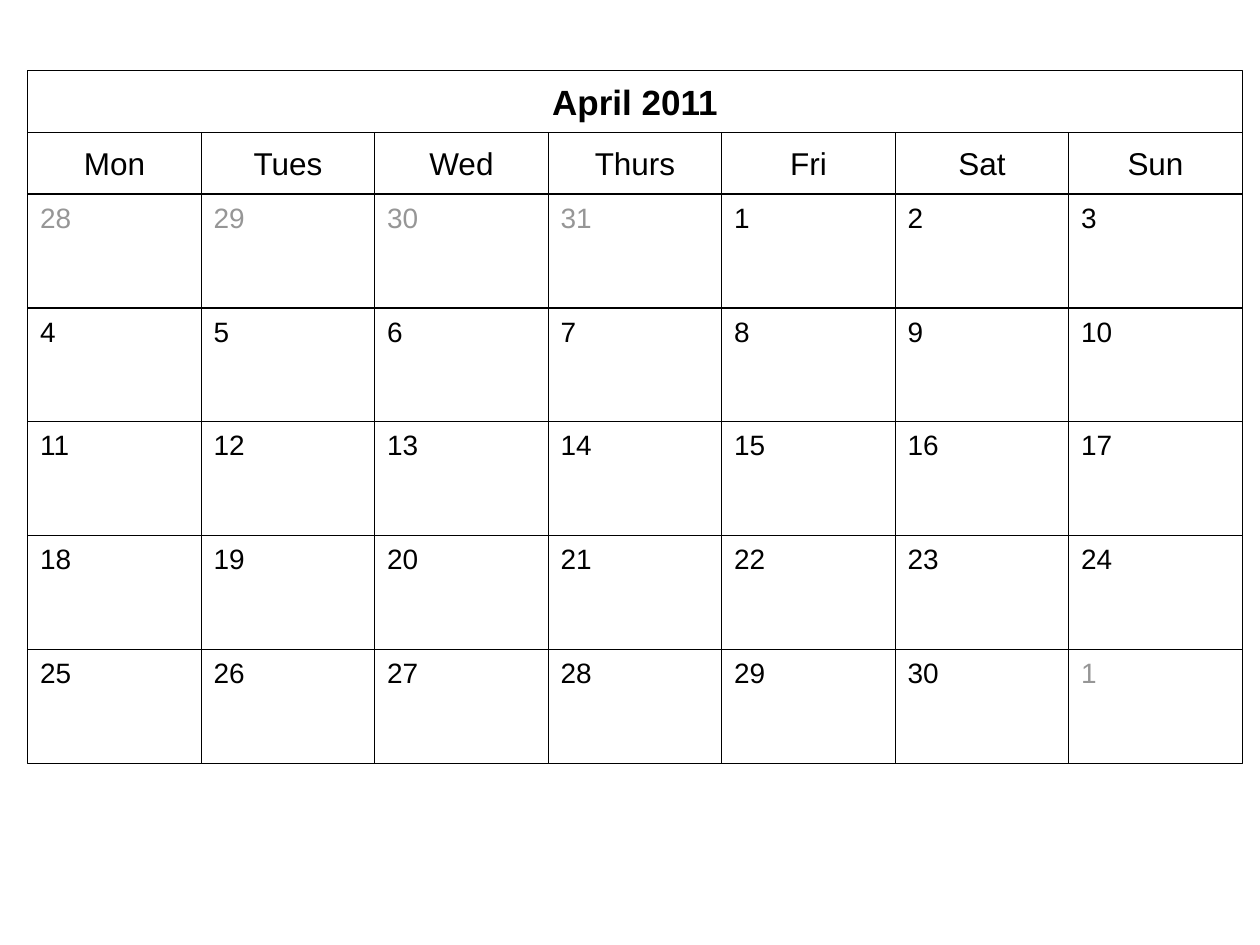
from dataclasses import dataclass

import pptx
import pptx.dml.color
import pptx.enum.shapes
import pptx.enum.text
import pptx.util
from pptx.util import Inches


@dataclass(frozen=True)
class Theme:
    font: str = "Arial"
    ink: str = "000000"
    muted: str = "969696"
    paper: str = "FFFFFF"
    title_size: int = 20
    weekday_size: int = 18
    day_size: int = 16
    line_width: float = 0.75


@dataclass(frozen=True)
class Box:
    left: float
    top: float
    width: float
    height: float


THEME = Theme()
HEADER_HEIGHT = 0.49
TITLE = "April 2011"
WEEKDAYS = ["Mon", "Tues", "Wed", "Thurs", "Fri", "Sat", "Sun"]
WEEKS = 5
DAYS_IN_MONTH = 30
DAYS_IN_PREVIOUS_MONTH = 31
LEADING_DAYS = 4


def rgb(value):
    return pptx.dml.color.RGBColor.from_string(value)


def add_cell(slide, box, text, size, color=THEME.ink, header=False, bold=False):
    shape = slide.shapes.add_shape(
        pptx.enum.shapes.MSO_SHAPE.RECTANGLE,
        Inches(box.left), Inches(box.top), Inches(box.width), Inches(box.height))
    shape.shadow.inherit = False
    shape.fill.solid()
    shape.fill.fore_color.rgb = rgb(THEME.paper)
    shape.line.color.rgb = rgb(THEME.ink)
    shape.line.width = pptx.util.Pt(THEME.line_width)

    frame = shape.text_frame
    frame.word_wrap = True
    frame.margin_left = frame.margin_right = Inches(0.1)
    frame.margin_top = frame.margin_bottom = Inches(0.02 if header else 0.05)
    anchors = pptx.enum.text.MSO_ANCHOR
    frame.vertical_anchor = anchors.MIDDLE if header else anchors.TOP
    frame.text = text
    paragraph = frame.paragraphs[0]
    alignments = pptx.enum.text.PP_ALIGN
    paragraph.alignment = alignments.CENTER if header else alignments.LEFT
    font = paragraph.runs[0].font
    font.name = THEME.font
    font.size = pptx.util.Pt(size)
    font.bold = bold
    font.color.rgb = rgb(color)


def add_weekday_row(slide, box):
    width = box.width / len(WEEKDAYS)
    for column, weekday in enumerate(WEEKDAYS):
        cell = Box(box.left + column * width, box.top, width, box.height)
        add_cell(slide, cell, weekday, THEME.weekday_size, header=True)


def day_label(index):
    """Return the day number and its colour for a position in the grid."""
    day = index - LEADING_DAYS + 1
    if day < 1:
        return str(day + DAYS_IN_PREVIOUS_MONTH), THEME.muted
    if day > DAYS_IN_MONTH:
        return str(day - DAYS_IN_MONTH), THEME.muted
    return str(day), THEME.ink


def add_day_grid(slide, box):
    width = box.width / len(WEEKDAYS)
    height = box.height / WEEKS
    for index in range(WEEKS * len(WEEKDAYS)):
        row, column = divmod(index, len(WEEKDAYS))
        cell = Box(box.left + column * width, box.top + row * height, width, height)
        text, color = day_label(index)
        add_cell(slide, cell, text, THEME.day_size, color)


def add_calendar(slide, box):
    # Month title
    title_box = Box(box.left, box.top, box.width, HEADER_HEIGHT)
    add_cell(slide, title_box, TITLE, THEME.title_size, header=True, bold=True)

    # Weekday names
    weekday_top = box.top + HEADER_HEIGHT
    add_weekday_row(slide, Box(box.left, weekday_top, box.width, HEADER_HEIGHT))

    # Days
    grid_top = weekday_top + HEADER_HEIGHT
    grid_height = box.height - 2 * HEADER_HEIGHT
    add_day_grid(slide, Box(box.left, grid_top, box.width, grid_height))


def main():
    presentation = pptx.Presentation()
    presentation.slide_width = Inches(10)
    presentation.slide_height = Inches(7.5)
    slide = presentation.slides.add_slide(presentation.slide_layouts[6])
    add_calendar(slide, Box(0.22, 0.56, 9.64, 5.5))
    presentation.save("out.pptx")


if __name__ == "__main__":
    main()
